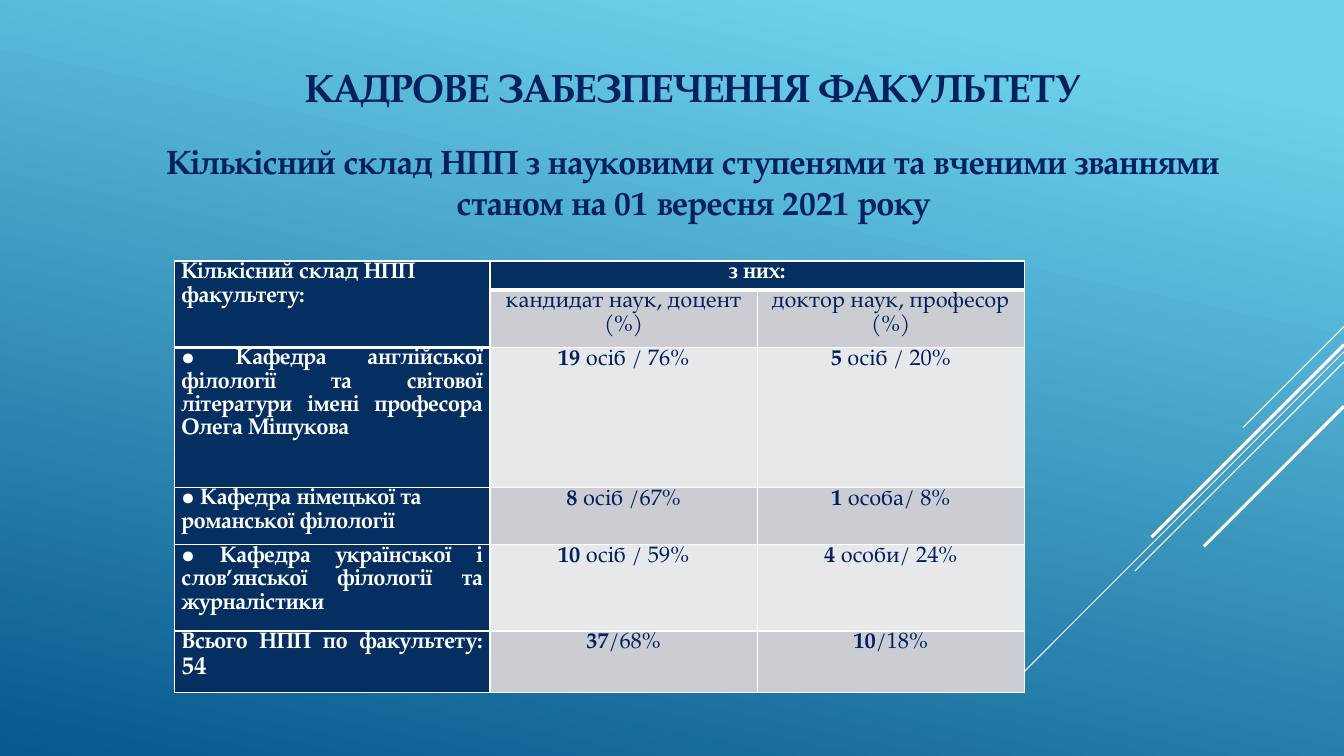
from dataclasses import dataclass

from lxml.etree import SubElement
from pptx import Presentation
from pptx.dml.color import RGBColor
from pptx.enum.shapes import MSO_CONNECTOR as Link
from pptx.enum.text import MSO_AUTO_SIZE as Fit, PP_ALIGN as Align
from pptx.oxml import parse_xml
from pptx.oxml.ns import nsdecls, qn
from pptx.slide import Slide
from pptx.table import Table, _Cell as Cell
from pptx.text.text import _Paragraph as Para
from pptx.util import Pt

NAVY = RGBColor(0x00, 0x20, 0x60)
DEEP = RGBColor(0x05, 0x2F, 0x61)
WHITE = RGBColor(0xFF, 0xFF, 0xFF)
GRAY = RGBColor(0xCC, 0xCD, 0xD2)
PALE = RGBColor(0xE7, 0xE8, 0xEA)
SKY = RGBColor(0x6E, 0xD2, 0xEB)
SEA = RGBColor(0x06, 0x58, 0x8E)
FACE = "TeX Gyre Pagella"
WIDE, HIGH = 960, 540
COLS = [225.4, 190.8, 190.8]
ROWS = [19.4, 39.6, 100, 39.6, 59.8, 39.6]
THIN, THICK = 1, 3


@dataclass
class Run:
    text: str
    bold: bool = True
    size: float = 16


@dataclass
class Ray:
    """A line at 45 degrees, from the right edge down to the left."""
    top: float
    reach: float
    width: float


@dataclass
class Unit:
    name: list[Run]
    align: Align
    counts: list[tuple[str, str]]


RAYS = [
    Ray(233.3, 72, 0.75),
    Ray(251.3, 234.7, 0.75),
    Ray(258.5, 149.4, 0.75),
    Ray(246.2, 137.5, 2.25),
    Ray(290.2, 100.1, 2.25),
]
HEADS = ["кандидат наук, доцент (%)", "доктор наук, професор (%)"]
UNITS = [
    Unit([Run("• Кафедра англійської філології та світової літератури "
              "імені професора Олега Мішукова")], Align.JUSTIFY,
         [("19", " осіб / 76%"), ("5", " осіб / 20%")]),
    Unit([Run("• Кафедра німецької та романської філології")], Align.LEFT,
         [("8", " осіб /67%"), ("1", " особа/ 8%")]),
    Unit([Run("• Кафедра української і слов’янської філології "
              "та журналістики")], Align.JUSTIFY,
         [("10", " осіб / 59%"), ("4", " особи/ 24%")]),
    Unit([Run("Всього НПП по факультету: "), Run("54", size=18)],
         Align.JUSTIFY, [("37", "/68%"), ("10", "/18%")]),
]


def write(para: Para, runs: list[Run], ink: RGBColor, form: dict) -> None:
    for key, value in form.items():
        setattr(para, key, value)
    for run in runs:
        part = para.add_run()
        part.text = run.text
        look = {"name": FACE, "size": Pt(run.size), "bold": run.bold}
        for key, value in look.items():
            setattr(part.font, key, value)
        part.font.color.rgb = ink


def edge(cell: Cell, top: float, base: float) -> None:
    """Give the cell white borders; the sides are thin."""
    props = cell._tc.get_or_add_tcPr()
    sides = {"lnL": THIN, "lnR": THIN, "lnT": top, "lnB": base}
    for spot, (tag, width) in enumerate(sides.items()):
        props.insert(spot, parse_xml(
            f'<a:{tag} {nsdecls("a")} w="{Pt(width)}"><a:solidFill>'
            f'<a:srgbClr val="{WHITE}"/></a:solidFill></a:{tag}>'))


def fill(cell: Cell, runs: list[Run], back: RGBColor, align: Align) -> None:
    cell.fill.solid()
    cell.fill.fore_color.rgb = back
    ink = WHITE if back == DEEP else NAVY
    form = {"alignment": align, "line_spacing": 1.07, "space_after": Pt(8)}
    write(cell.text_frame.paragraphs[0], runs, ink, form)


def paint(slide: Slide) -> None:
    back = slide.background.fill
    back.gradient()
    back.gradient_angle = 258
    for stop, (spot, color) in zip(back.gradient_stops, [(0.1, SKY), (1, SEA)]):
        stop.position = spot
        stop.color.rgb = color


def draw(slide: Slide, ray: Ray) -> None:
    line = slide.shapes.add_connector(
        Link.STRAIGHT, Pt(WIDE), Pt(ray.top),
        Pt(WIDE - ray.reach), Pt(ray.top + ray.reach))
    line.line.color.rgb = WHITE
    line.line.width = Pt(ray.width)
    SubElement(line._element.spPr, qn("a:effectLst"))


def title(slide: Slide) -> None:
    box = slide.shapes.add_textbox(Pt(92.2), Pt(41.8), Pt(805.7), Pt(179.3))
    frame = box.text_frame
    frame.word_wrap = True
    frame.auto_size = Fit.SHAPE_TO_FIT_TEXT
    form = {"alignment": Align.CENTER}
    write(frame.paragraphs[0],
          [Run("КАДРОВЕ ЗАБЕЗПЕЧЕННЯ ФАКУЛЬТЕТУ", size=28)], NAVY, form)
    write(frame.add_paragraph(),
          [Run("Кількісний склад НПП з науковими ступенями та вченими "
               "званнями станом на 01 вересня 2021 року", size=24)],
          NAVY, form | {"space_before": Pt(22)})


def frame(table: Table) -> None:
    """Set the sizes, margins and borders of the grid."""
    for col, width in zip(table.columns, COLS):
        col.width = Pt(width)
    for row, height in zip(table.rows, ROWS):
        row.height = Pt(height)
    margins = {"margin_left": 5, "margin_right": 5,
               "margin_top": 0, "margin_bottom": 0}
    for y in range(len(ROWS)):
        for x in range(len(COLS)):
            cell = table.cell(y, x)
            for key, value in margins.items():
                setattr(cell, key, Pt(value))
            last = 1 if x == 0 else 0
            edge(cell, THICK if y == last + 1 else THIN,
                 THICK if y == last else THIN)


def staff(slide: Slide) -> None:
    table = slide.shapes.add_table(
        len(ROWS), len(COLS), Pt(124.6), Pt(186.5),
        Pt(sum(COLS)), Pt(sum(ROWS))).table
    frame(table)
    table.cell(0, 0).merge(table.cell(1, 0))
    table.cell(0, 1).merge(table.cell(0, 2))
    fill(table.cell(0, 0), [Run("Кількісний склад НПП факультету:")],
         DEEP, Align.LEFT)
    fill(table.cell(0, 1), [Run("з них:")], DEEP, Align.CENTER)
    for x, head in enumerate(HEADS, 1):
        fill(table.cell(1, x), [Run(head, False)], GRAY, Align.CENTER)
    for y, unit in enumerate(UNITS, 2):
        fill(table.cell(y, 0), unit.name, DEEP, unit.align)
        band = GRAY if y % 2 else PALE
        for x, (count, rest) in enumerate(unit.counts, 1):
            fill(table.cell(y, x), [Run(count), Run(rest, False)],
                 band, Align.CENTER)


def main() -> None:
    deck = Presentation()
    deck.slide_width, deck.slide_height = Pt(WIDE), Pt(HIGH)
    slide = deck.slides.add_slide(deck.slide_layouts[6])
    paint(slide)
    for ray in RAYS:
        draw(slide, ray)
    title(slide)
    staff(slide)
    deck.save("out.pptx")


if __name__ == "__main__":
    main()
